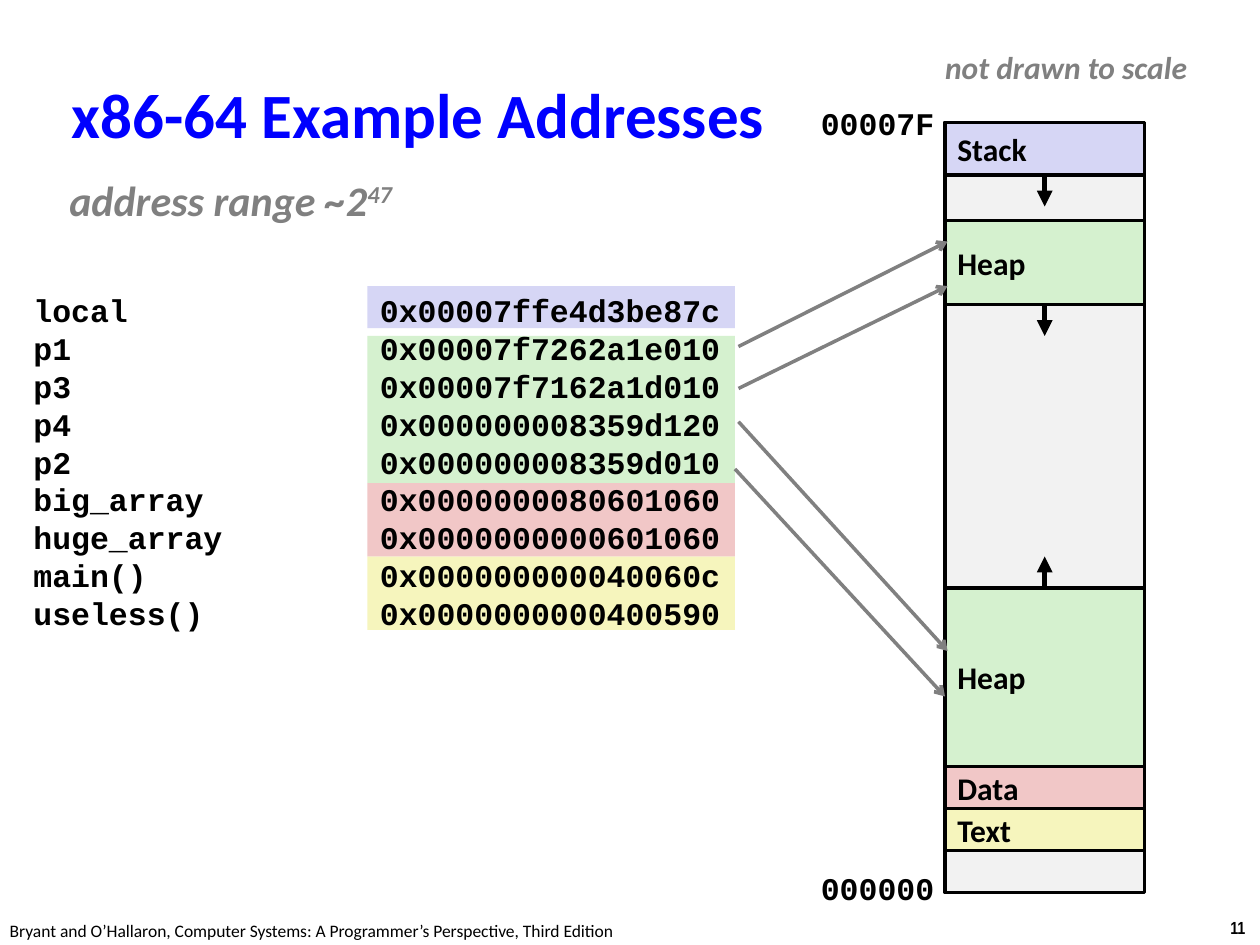
"""Builds the slide on x86-64 example addresses and the memory regions they fall in."""
from lxml import etree
from pptx import Presentation
from pptx.dml.color import RGBColor
from pptx.enum import shapes, text
from pptx.oxml import ns
from pptx.util import Pt

BLACK, GRAY, BLUE = "000000", "808080", "0000FF"
STACK, HEAP, DATA, CODE, UNUSED = "D6D6F5", "D5F1CF", "F1C7C7", "F6F5BD", "F2F2F2"
SANS, MONO = "Calibri", "Courier New"

ADDRESSES = [
    ("local", "0x00007ffe4d3be87c"),
    ("p1", "0x00007f7262a1e010"),
    ("p3", "0x00007f7162a1d010"),
    ("p4", "0x000000008359d120"),
    ("p2", "0x000000008359d010"),
    ("big_array", "0x0000000080601060"),
    ("huge_array", "0x0000000000601060"),
    ("main()", "0x000000000040060c"),
    ("useless()", "0x0000000000400590"),
]
BANDS = [(CODE, 318, 42), (DATA, 276, 42), (STACK, 163.5, 24), (HEAP, 192, 84)]
BAND_LEFT, BAND_WIDTH = 210, 210
MEMORY_LEFT, MEMORY_WIDTH = 540, 114
MEMORY_TOP, MEMORY_HEIGHT = 70, 440
BOTTOM, TOP = 2, 0
REGIONS = [
    ("Text", CODE, 462, 24, None),
    ("Data", DATA, 438, 24, None),
    ("Heap", HEAP, 336, 102, TOP),
    ("Heap", HEAP, 126, 48, BOTTOM),
    ("Stack", STACK, MEMORY_TOP, 30, BOTTOM),
]
GROWTH = 18
POINTERS = [
    ((422, 198), (541.5, 138)),
    ((422, 222), (541.5, 163.5)),
    ((422, 241), (541.5, 372)),
    ((420, 268), (540, 398)),
]
LABELS = [
    ("11", (696, 520.5, 24.5, 19.5), dict(size=10, font="Arial Narrow", bold=True)),
    ("Bryant and O’Hallaron, Computer Systems: A Programmer’s Perspective, Third Edition",
     (-1.5, 522, 366, 19.5), dict(size=10)),
    ("00007F", (462, 56, 80, 29), dict(font=MONO, bold=True)),
    ("000000", (462, 493, 80, 29), dict(font=MONO, bold=True)),
    ("not drawn to scale", (533, 24, 153.5, 29), dict(color=GRAY, bold=True, italic=True)),
]


def rgb(value):
    return RGBColor.from_string(value)


def write(paragraph, words, size=18, font=SANS, color=BLACK, bold=False, italic=False):
    run = paragraph.add_run()
    run.text = words
    run.font.size, run.font.name = Pt(size), font
    run.font.bold, run.font.italic = bold, italic
    run.font.color.rgb = rgb(color)
    return run


def add_frame(slide, box, wrap=False):
    frame = slide.shapes.add_textbox(*map(Pt, box)).text_frame
    frame.word_wrap = wrap
    return frame


def add_block(slide, box, fill, outline=None):
    block = slide.shapes.add_shape(shapes.MSO_SHAPE.RECTANGLE, *map(Pt, box))
    block.shadow.inherit = False
    block.fill.solid()
    block.fill.fore_color.rgb = rgb(fill)
    if outline:
        block.line.color.rgb = rgb(outline)
        block.line.width = Pt(2)
    else:
        block.line.fill.background()
    return block


def add_arrow(slide, start, end, color, width, head):
    arrow = slide.shapes.add_connector(
        shapes.MSO_CONNECTOR.STRAIGHT, *map(Pt, start + end))
    arrow.line.color.rgb = rgb(color)
    arrow.line.width = Pt(width)
    etree.SubElement(arrow.line._get_or_add_ln(), ns.qn("a:tailEnd"), type=head)
    etree.SubElement(arrow._element.spPr, ns.qn("a:effectLst"))
    return arrow


def add_addresses(slide):
    for fill, top, height in BANDS:
        add_block(slide, (BAND_LEFT, top, BAND_WIDTH, height), fill)
    frame = add_frame(slide, (12, 163, 444, 203), wrap=True)
    for index, row in enumerate(ADDRESSES):
        line = frame.add_paragraph() if index else frame.paragraphs[0]
        write(line, "\t".join(row), font=MONO, bold=True)
        stops = etree.SubElement(line._p.get_or_add_pPr(), ns.qn("a:tabLst"))
        etree.SubElement(stops, ns.qn("a:tab"), pos=str(Pt(198)), algn="l")


def add_memory(slide):
    add_block(slide, (MEMORY_LEFT, MEMORY_TOP, MEMORY_WIDTH, MEMORY_HEIGHT), UNUSED, BLACK)
    middle = MEMORY_LEFT + MEMORY_WIDTH / 2
    for name, fill, top, height, side in REGIONS:
        region = add_block(slide, (MEMORY_LEFT, top, MEMORY_WIDTH, height), fill, BLACK)
        region.text_frame.vertical_anchor = text.MSO_ANCHOR.MIDDLE
        region.text_frame.paragraphs[0].alignment = text.PP_ALIGN.LEFT
        write(region.text_frame.paragraphs[0], name, bold=True)
        if side is not None:
            edge, step = (top, -GROWTH) if side == TOP else (top + height, GROWTH)
            growth = add_arrow(
                slide, (middle, edge), (middle, edge + step), BLACK, 3, "triangle")
            growth.begin_connect(region, side)


def main():
    deck = Presentation()
    deck.slide_width, deck.slide_height = Pt(720), Pt(540)
    slide = deck.slides.add_slide(deck.slide_layouts[6])

    add_addresses(slide)
    title = add_frame(slide, (34, 42, 518, 45), wrap=True)
    title.vertical_anchor = text.MSO_ANCHOR.MIDDLE
    write(title.paragraphs[0], "x86-64 Example Addresses", size=36, color=BLUE, bold=True)

    subtitle = add_frame(slide, (36, 96, 195, 36.5))
    subtitle.margin_left = subtitle.margin_right = Pt(3.6)
    style = dict(size=24, color=GRAY, bold=True, italic=True)
    write(subtitle.paragraphs[0], "address range ~2", **style)
    exponent = write(subtitle.paragraphs[0], "47", **style)
    exponent.font._element.set("baseline", "30000")

    for words, box, style in LABELS:
        write(add_frame(slide, box).paragraphs[0], words, **style)
    add_memory(slide)
    for start, end in POINTERS:
        add_arrow(slide, start, end, GRAY, 2, "arrow")
    deck.save("out.pptx")


if __name__ == "__main__":
    main()
